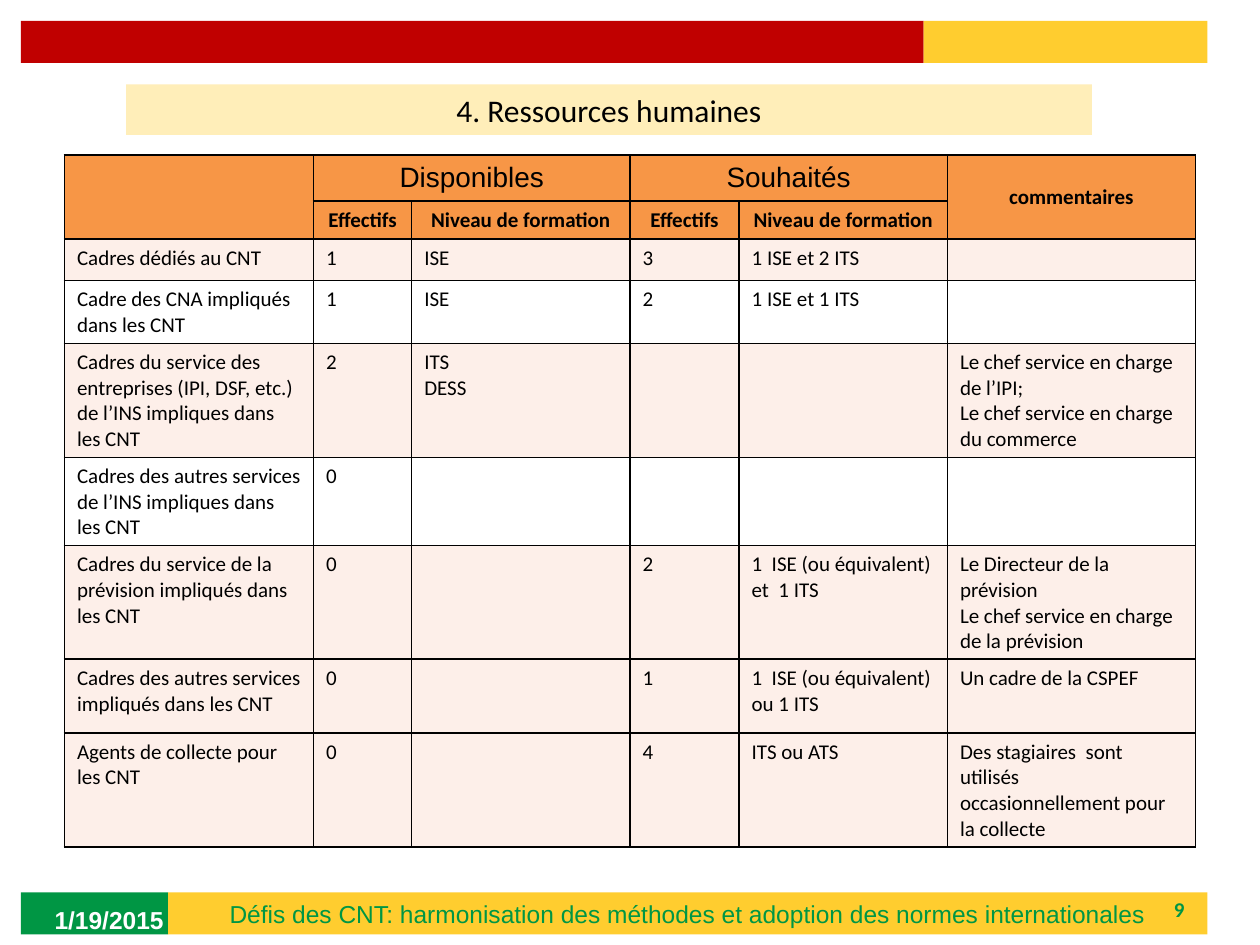
from lxml import etree
from pptx import Presentation
from pptx.dml.color import RGBColor
from pptx.enum import shapes, text
from pptx.oxml.ns import qn
from pptx.util import Cm, Pt

RED = RGBColor(0xC0, 0x00, 0x00)
YELLOW = RGBColor(0xFF, 0xCD, 0x2F)
PALE_YELLOW = RGBColor(0xFF, 0xEE, 0xB9)
GREEN = RGBColor(0x00, 0x96, 0x44)
ORANGE = RGBColor(0xF7, 0x96, 0x46)
PALE_PINK = RGBColor(0xFD, 0xEF, 0xE9)
WHITE = RGBColor(0xFF, 0xFF, 0xFF)
BLACK = RGBColor(0x00, 0x00, 0x00)


def format_text(frame, size, name, color, bold=False, align=text.PP_ALIGN.LEFT):
    for paragraph in frame.paragraphs:
        paragraph.alignment = align
        paragraph.font.size = Pt(size)
        paragraph.font.name = name
        paragraph.font.bold = bold
        paragraph.font.color.rgb = color


def add_borders(cell):
    """Draw a 1 pt black line on each side; call before filling the cell."""
    properties = cell._tc.get_or_add_tcPr()
    for side in ("a:lnL", "a:lnR", "a:lnT", "a:lnB"):
        line = etree.SubElement(properties, qn(side), w=str(Pt(1)))
        fill = etree.SubElement(line, qn("a:solidFill"))
        etree.SubElement(fill, qn("a:srgbClr"), val=str(BLACK))


presentation = Presentation()
presentation.slide_width = Cm(25.4)
presentation.slide_height = Cm(19.05)
slide = presentation.slides.add_slide(presentation.slide_layouts[5])
center = text.PP_ALIGN.CENTER

# Bands at the top and bottom
bands = {}
for name, left, top, width, color in [
    ("date", 0.42, 17.99, 2.97, GREEN),
    ("footer", 3.39, 17.99, 20.95, YELLOW),
    ("top left", 0.42, 0.42, 18.2, RED),
    ("top right", 18.62, 0.42, 5.72, YELLOW),
]:
    band = slide.shapes.add_shape(
        shapes.MSO_SHAPE.RECTANGLE, Cm(left), Cm(top), Cm(width), Cm(0.85))
    band.shadow.inherit = False
    band.fill.solid()
    band.fill.fore_color.rgb = color
    band.line.fill.background()
    bands[name] = band

footer = bands["footer"].text_frame
footer.text = "Défis des CNT: harmonisation des méthodes et adoption des normes internationales"
footer.vertical_anchor = text.MSO_ANCHOR.MIDDLE
format_text(footer, 14, "Arial", GREEN, align=center)

# Slide number and date
for label, left, top, height, size, font, color, align in [
    ("9", 18.2, 17.99, 0.68, 12, "Calibri", GREEN, text.PP_ALIGN.RIGHT),
    ("1/19/2015", 0.85, 18.03, 1.02, 14, "Arial", WHITE, text.PP_ALIGN.LEFT),
]:
    box = slide.shapes.add_textbox(Cm(left), Cm(top), Cm(5.93), Cm(height))
    frame = box.text_frame
    frame.word_wrap = True
    frame.vertical_anchor = text.MSO_ANCHOR.MIDDLE
    frame.text = label
    format_text(frame, size, font, color, bold=True, align=align)

# Title
title = slide.shapes.title
title.left, title.top, title.width, title.height = Cm(2.54), Cm(1.7), Cm(19.47), Cm(1.02)
title.fill.solid()
title.fill.fore_color.rgb = PALE_YELLOW
title.text_frame.text = "4. Ressources humaines"
title.text_frame.auto_size = text.MSO_AUTO_SIZE.NONE
title.text_frame.vertical_anchor = text.MSO_ANCHOR.MIDDLE
format_text(title.text_frame, 18, "Calibri", BLACK, align=center)

# Staff table
rows = [
    ["", "Disponibles", "", "Souhaités", "", "commentaires"],
    ["", "Effectifs", "Niveau de formation", "Effectifs", "Niveau de formation", ""],
    ["Cadres dédiés au CNT", "1", "ISE", "3", "1 ISE et 2 ITS", ""],
    ["Cadre des CNA impliqués dans les CNT", "1", "ISE", "2", "1 ISE et 1 ITS", ""],
    ["Cadres du service des entreprises (IPI, DSF, etc.) de l’INS impliques dans les CNT",
     "2", "ITS\nDESS", "", "",
     "Le chef service en charge de l’IPI;\nLe chef service en charge du commerce"],
    ["Cadres des autres services de l’INS impliques dans les CNT", "0", "", "", "", ""],
    ["Cadres du service de la prévision impliqués dans les CNT", "0", "", "2",
     "1  ISE (ou équivalent) et  1 ITS",
     "Le Directeur de la prévision\nLe chef service en charge de la prévision"],
    ["Cadres des autres services impliqués dans les CNT", "0", "", "1",
     "1  ISE (ou équivalent) ou 1 ITS", "Un cadre de la CSPEF"],
    ["Agents de collecte pour les CNT", "0", "", "4", "ITS ou ATS",
     "Des stagiaires  sont utilisés  occasionnellement pour la collecte"],
]
column_widths = [5.02, 1.98, 4.4, 2.2, 4.2, 5.0]
row_heights = [0.93, 0.77, 0.83, 1.27, 2.3, 1.77, 2.28, 1.49, 2.3]
header_rows = 2
white_rows = (3, 5)

table = slide.shapes.add_table(
    len(rows), len(column_widths), Cm(1.3), Cm(3.12),
    Cm(sum(column_widths)), Cm(sum(row_heights))).table
table.first_row = False
table.horz_banding = False
for column, width in zip(table.columns, column_widths):
    column.width = Cm(width)
for row, height in zip(table.rows, row_heights):
    row.height = Cm(height)

for i, labels in enumerate(rows):
    for j, label in enumerate(labels):
        cell = table.cell(i, j)
        is_header = i < header_rows
        add_borders(cell)
        cell.fill.solid()
        cell.fill.fore_color.rgb = (
            ORANGE if is_header else WHITE if i in white_rows else PALE_PINK)
        frame = cell.text_frame
        frame.text = label
        if label in ("Disponibles", "Souhaités"):
            format_text(frame, 16, "Arial", BLACK, align=center)
        else:
            format_text(frame, 12, "Calibri", BLACK, bold=is_header,
                        align=center if is_header else text.PP_ALIGN.LEFT)
        if is_header:
            cell.vertical_anchor = text.MSO_ANCHOR.MIDDLE
        if not label:
            end = etree.SubElement(frame.paragraphs[0]._p, qn("a:endParaRPr"))
            end.set("sz", "1200")

for first, last in [((0, 0), (1, 0)), ((0, 1), (0, 2)), ((0, 3), (0, 4)), ((0, 5), (1, 5))]:
    table.cell(*first).merge(table.cell(*last))

presentation.save("out.pptx")
